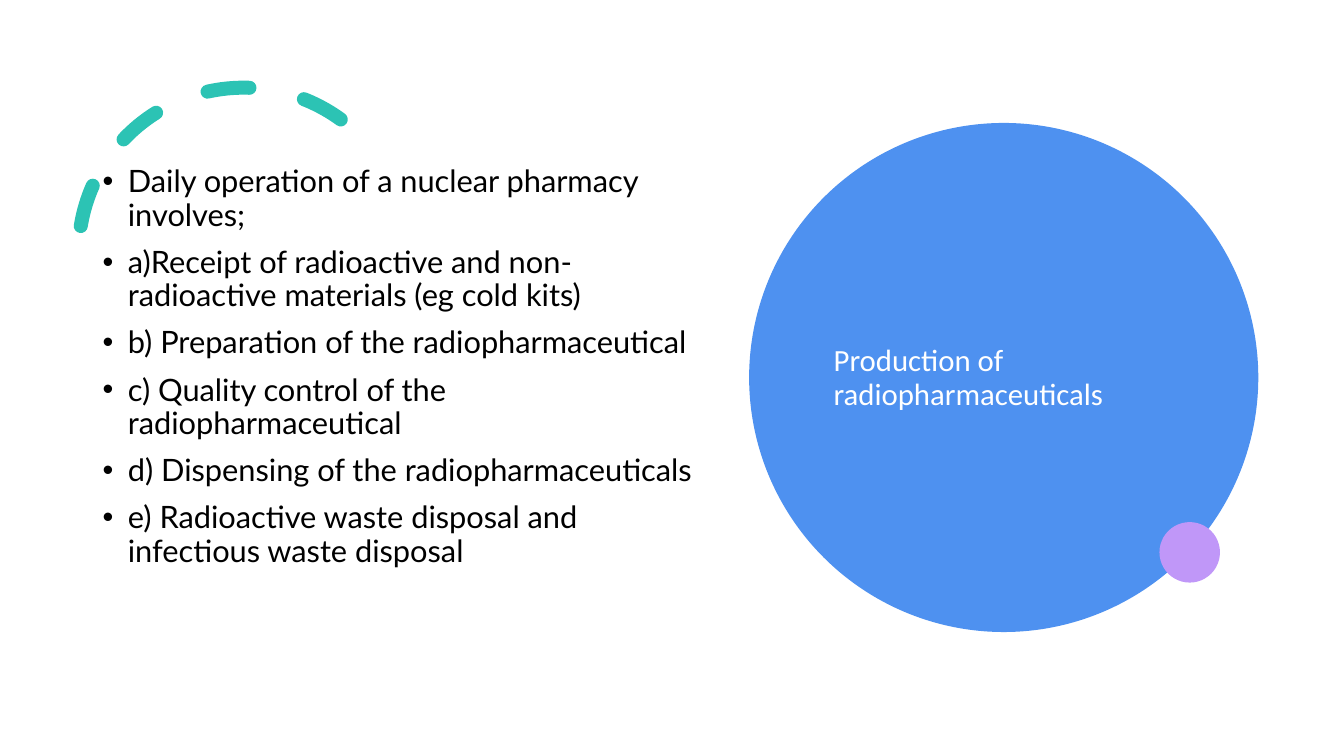
from pptx import Presentation
from pptx.dml.color import RGBColor
from pptx.enum.dml import MSO_LINE
from pptx.enum.shapes import MSO_SHAPE
from pptx.enum.text import MSO_ANCHOR, PP_ALIGN
from pptx.oxml.ns import qn
from pptx.util import Pt

ARC = MSO_SHAPE.ARC
ELLIPSE = MSO_SHAPE.OVAL
DASH = MSO_LINE.DASH
TOP = MSO_ANCHOR.TOP
MIDDLE = MSO_ANCHOR.MIDDLE
LEFT = PP_ALIGN.LEFT

EMU_PER_PX = 9144
COLORS = {
    "white": "FFFFFF",
    "black": "000000",
    "teal": "2CC3B4",
    "blue": "4E91F0",
    "lilac": "C097F8",
}
TITLE = "Production of radiopharmaceuticals"
OPERATIONS = [
    "Daily operation of a nuclear pharmacy involves;",
    "a)Receipt of radioactive and non-radioactive materials (eg cold kits)",
    "b) Preparation of the radiopharmaceutical",
    "c) Quality control of the radiopharmaceutical",
    "d) Dispensing of the radiopharmaceuticals",
    "e) Radioactive waste disposal and infectious waste disposal",
]


def px(length):
    return length * EMU_PER_PX


def color(name):
    return RGBColor.from_string(COLORS[name])


def apply(target, values):
    for name, value in values.items():
        setattr(target, name, value)


class SlideBuilder:
    text_size = Pt(22)
    line_spacing = 0.9
    space_before = Pt(10)
    bullet_indent = px(25)

    def __init__(self, presentation):
        self.slide = presentation.slides.add_slide(presentation.slide_layouts[6])
        self.slide.background.fill.solid()
        self.slide.background.fill.fore_color.rgb = color("white")

    def add_shape(self, kind, box):
        shape = self.slide.shapes.add_shape(kind, *map(px, box))
        shape.shadow.inherit = False
        return shape

    def circle(self, left, top, diameter, fill):
        shape = self.add_shape(ELLIPSE, (left, top, diameter, diameter))
        shape.fill.solid()
        shape.fill.fore_color.rgb = color(fill)
        shape.line.fill.background()

    def dashed_arc(self, left, top, diameter, rotation, angles, stroke):
        shape = self.add_shape(ARC, (left, top, diameter, diameter))
        for index, angle in enumerate(angles):
            shape.adjustments[index] = angle * 0.6
        shape.rotation = rotation
        shape.element.spPr.find(qn("a:xfrm")).set("flipH", "1")
        shape.fill.background()
        shape.line.color.rgb = color(stroke)
        apply(shape.line, {"width": Pt(10), "dash_style": DASH})
        shape.line._get_or_add_ln().set("cap", "rnd")

    def text(self, box, lines, font, fill, anchor=TOP, bullets=False):
        frame = self.slide.shapes.add_textbox(*map(px, box)).text_frame
        apply(frame, {"word_wrap": True, "vertical_anchor": anchor})
        for index, line in enumerate(lines):
            paragraph = frame.add_paragraph() if index else frame.paragraphs[0]
            paragraph.text = line
            apply(paragraph, {
                "alignment": LEFT,
                "line_spacing": self.line_spacing,
                "space_before": self.space_before if index else Pt(0),
            })
            if bullets:
                self.bullet(paragraph)
            apply(paragraph.font, {"name": font, "size": self.text_size})
            paragraph.font.color.rgb = color(fill)

    def bullet(self, paragraph):
        properties = paragraph._p.get_or_add_pPr()
        properties.set("marL", str(self.bullet_indent))
        properties.set("indent", str(-self.bullet_indent))
        bullet_font = properties.makeelement(qn("a:buFont"), {"typeface": "Arial"})
        bullet_character = properties.makeelement(qn("a:buChar"), {"char": "•"})
        properties.extend([bullet_font, bullet_character])


def main():
    presentation = Presentation()
    apply(presentation, {"slide_width": px(1333), "slide_height": px(750)})
    builder = SlideBuilder(presentation)
    builder.dashed_arc(78, 87, 327, 29.8, (263.62, 29.69), "teal")
    builder.circle(743, 122, 505, "blue")
    builder.text((817, 153, 354, 445), [TITLE], "Calibri", "white", anchor=MIDDLE)
    builder.text((92, 160, 605, 430), OPERATIONS, "Lato", "black", bullets=True)
    builder.circle(1150, 518, 60, "lilac")
    presentation.save("out.pptx")


if __name__ == "__main__":
    main()
